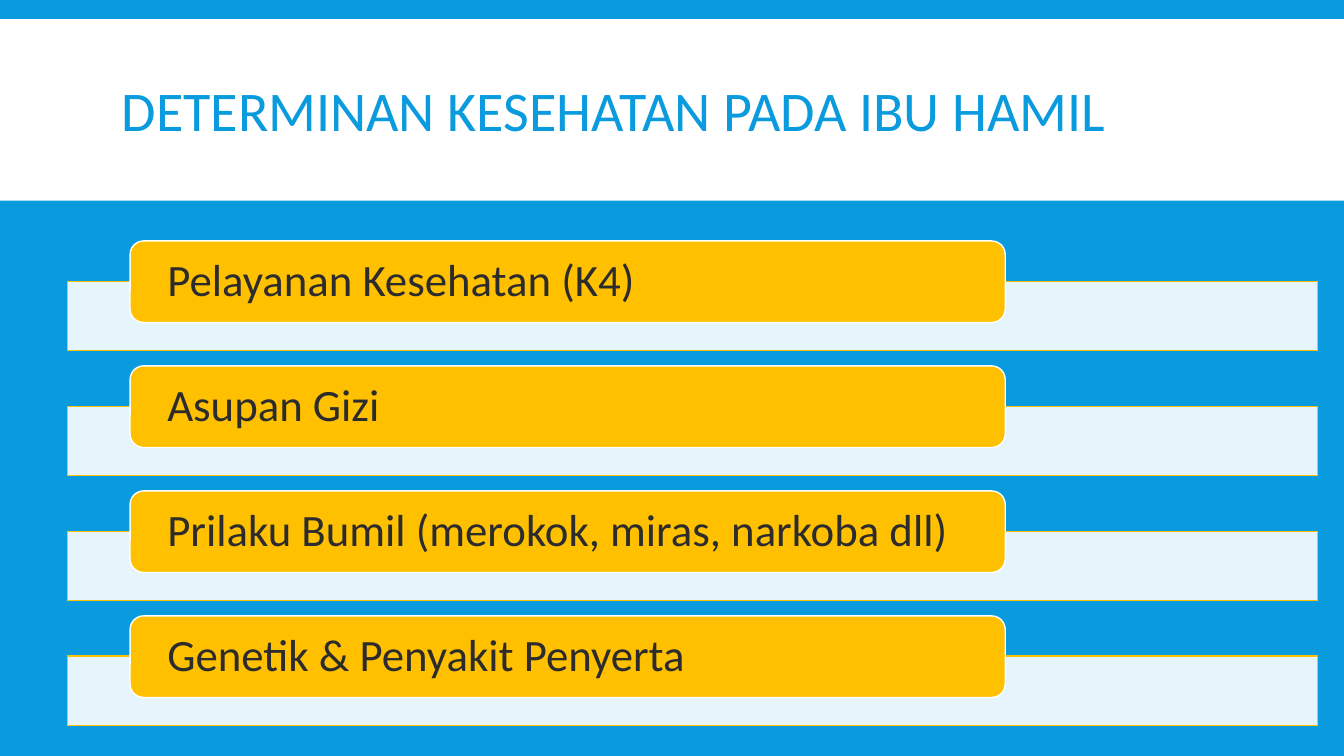
from dataclasses import dataclass

import pptx
import pptx.dml.color
import pptx.enum.shapes
import pptx.enum.text
import pptx.oxml
import pptx.oxml.ns
import pptx.util
from pptx.util import Inches

SHAPES = pptx.enum.shapes.MSO_SHAPE


@dataclass(frozen=True)
class Theme:
    blue: str = "099BDD"
    amber: str = "FFC000"
    white: str = "FFFFFF"
    ink: str = "2C2C2C"
    font: str = "Calibri"
    title_size: int = 40
    label_size: int = 32
    line_width: int = 1


THEME = Theme()
TITLE = "DETERMINAN KESEHATAN PADA IBU HAMIL"
DETERMINANTS = [
    "Pelayanan Kesehatan (K4)",
    "Asupan Gizi",
    "Prilaku Bumil (merokok, miras, narkoba dll)",
    "Genetik & Penyakit Penyerta",
]
FIRST_ROW_TOP = 2.39
ROW_STEP = 1.24


def rgb(color):
    return pptx.dml.color.RGBColor.from_string(color)


def add_panel(slide, kind, left, top, width, height, fill, line=None, opacity=100):
    """Add a filled shape; opacity is a percentage."""
    panel = slide.shapes.add_shape(
        kind, Inches(left), Inches(top), Inches(width), Inches(height))
    panel.shadow.inherit = False
    panel.fill.solid()
    panel.fill.fore_color.rgb = rgb(fill)
    if opacity < 100:
        color = panel.fill._xPr.find(".//" + pptx.oxml.ns.qn("a:srgbClr"))
        alpha = pptx.oxml.parse_xml(
            f'<a:alpha {pptx.oxml.ns.nsdecls("a")} val="{opacity * 1000}"/>')
        color.append(alpha)
    if line:
        panel.line.color.rgb = rgb(line)
        panel.line.width = pptx.util.Pt(THEME.line_width)
    else:
        panel.line.fill.background()
    return panel


def add_text(slide, text, left, top, width, height, *, size, color,
             line_spacing, side_inset=0.1, end_inset=0.05):
    box = slide.shapes.add_textbox(
        Inches(left), Inches(top), Inches(width), Inches(height))
    frame = box.text_frame
    frame.word_wrap = True
    frame.vertical_anchor = pptx.enum.text.MSO_ANCHOR.MIDDLE
    frame.margin_left = frame.margin_right = Inches(side_inset)
    frame.margin_top = frame.margin_bottom = Inches(end_inset)
    para = frame.paragraphs[0]
    para.line_spacing = line_spacing
    span = para.add_run()
    span.text = text
    span.font.name = THEME.font
    span.font.size = pptx.util.Pt(size)
    span.font.color.rgb = rgb(color)
    return box


def add_header(slide):
    add_panel(slide, SHAPES.RECTANGLE, 0, 0.19, 13.33, 1.8, THEME.white)
    add_text(slide, TITLE, 1.11, 0.31, 10.9, 1.65, size=THEME.title_size,
             color=THEME.blue, line_spacing=0.85)


def add_determinant(slide, label, top):
    """Add a pale bar with an amber label overlapping its upper edge."""
    add_panel(slide, SHAPES.RECTANGLE, 0.67, top + 0.4, 12.4, 0.69,
              THEME.white, line=THEME.amber, opacity=90)
    add_panel(slide, SHAPES.ROUNDED_RECTANGLE, 1.29, top, 8.68, 0.81,
              THEME.amber, line=THEME.white)
    add_text(slide, label, 1.33, top + 0.04, 8.6, 0.73, size=THEME.label_size,
             color=THEME.ink, line_spacing=0.9, side_inset=0.33, end_inset=0)


def main():
    deck = pptx.Presentation()
    deck.slide_width = Inches(13.33)
    deck.slide_height = Inches(7.5)
    slide = deck.slides.add_slide(deck.slide_layouts[6])
    slide.background.fill.solid()
    slide.background.fill.fore_color.rgb = rgb(THEME.blue)
    add_header(slide)
    for row, label in enumerate(DETERMINANTS):
        add_determinant(slide, label, FIRST_ROW_TOP + row * ROW_STEP)
    deck.save("out.pptx")


if __name__ == "__main__":
    main()
